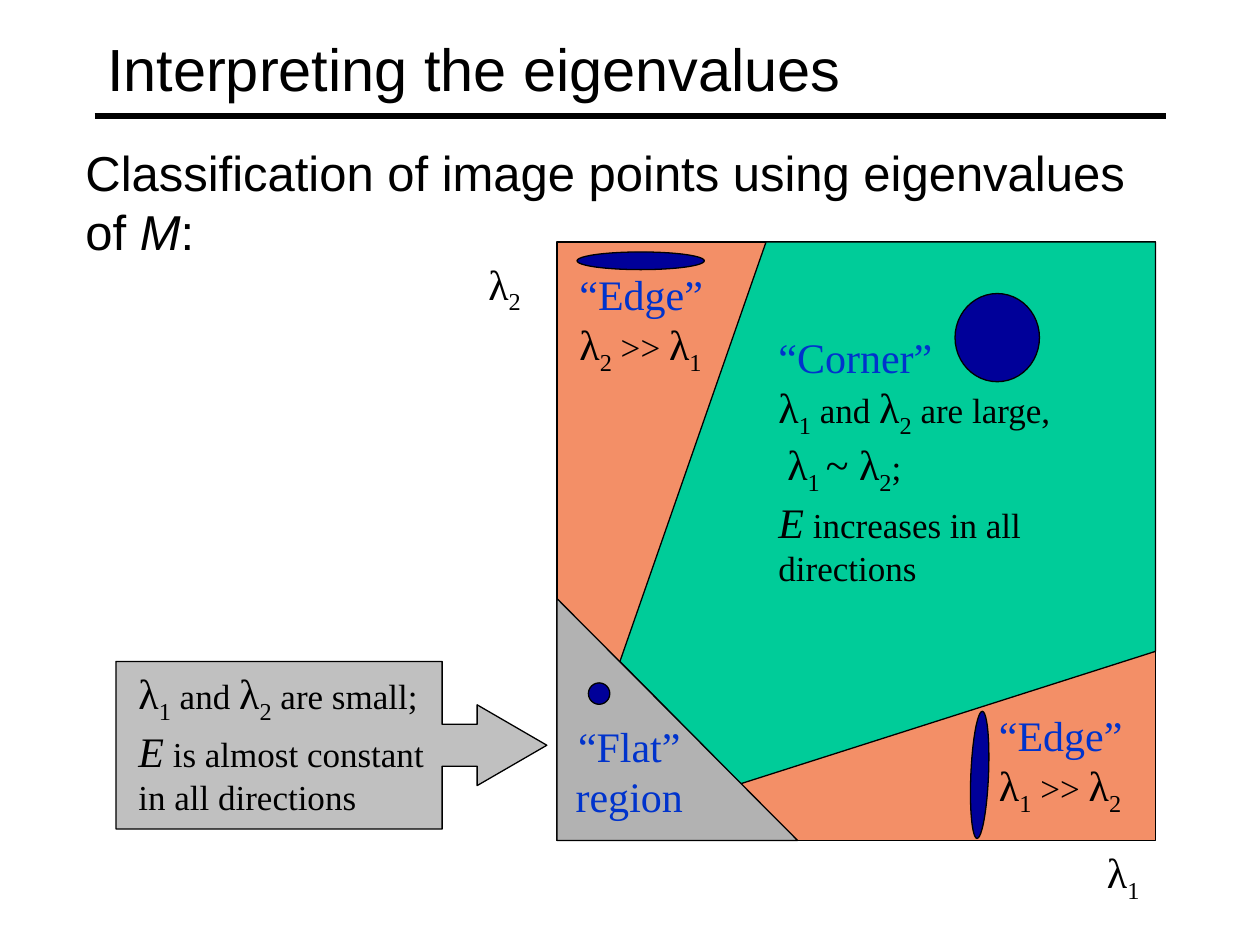
import pptx
import pptx.util
import pptx.dml.color
import pptx.enum.shapes
import pptx.enum.text
import lxml.etree

Inches = pptx.util.Inches
Pt = pptx.util.Pt
RGB = pptx.dml.color.RGBColor.from_string
MSO = pptx.enum.shapes.MSO_SHAPE
ALIGN = pptx.enum.text.PP_ALIGN
COLORS = {
    "black": "000000", "label": "0033CC", "edge": "F38F67", "corner": "00CC99",
    "flat": "B2B2B2", "callout": "C0C0C0", "ellipse": "000099",
}
SERIF = "Times New Roman"


def add_run(p, text, size=24, font=SERIF, color="black", sub=False, italic=False):
    r = p.add_run()
    r.text = text
    r.font.size = Pt(size)
    r.font.name = font
    r.font.color.rgb = RGB(COLORS[color])
    r.font.italic = italic
    if sub:
        r.font._element.set("baseline", "-25000")


prs = pptx.Presentation()
prs.slide_width, prs.slide_height = Inches(10), Inches(7.5)
s = prs.slides.add_slide(prs.slide_layouts[5])

title = s.shapes.title
title.left, title.top = Inches(0.75), Inches(0.08)
title.width, title.height = Inches(8.5), Inches(0.92)
tf = title.text_frame
tf.vertical_anchor = pptx.enum.text.MSO_ANCHOR.MIDDLE
tf.paragraphs[0].alignment = ALIGN.LEFT
add_run(tf.paragraphs[0], "Interpreting the eigenvalues", size=34, font="Arial")

rule = s.shapes.add_connector(
    pptx.enum.shapes.MSO_CONNECTOR.STRAIGHT,
    Inches(0.75), Inches(0.92), Inches(9.25), Inches(0.92))
rule.line.color.rgb = RGB(COLORS["black"])
rule.line.width = Pt(3)
lxml.etree.SubElement(
    rule._element.spPr, "{http://schemas.openxmlformats.org/drawingml/2006/main}effectLst")

corner_points = [(4.92, 5.25), (6.08, 1.92), (9.17, 1.92), (9.17, 5.17), (5.88, 6.22)]
shapes = [
    (MSO.RIGHT_ARROW_CALLOUT, 0.92, 5.25, 3.42, 1.33, "callout", 0),
    (MSO.RECTANGLE, 4.42, 1.92, 4.75, 4.75, "edge", 0),
    (None, 4.92, 1.92, 4.25, 4.31, "corner", 0),
    (MSO.RIGHT_TRIANGLE, 4.42, 4.75, 1.91, 1.92, "flat", 0),
    (MSO.OVAL, 7.58, 2.33, 0.67, 0.7, "ellipse", 0),
    (MSO.OVAL, 4.58, 2, 1.01, 0.14, "ellipse", 0),
    (MSO.OVAL, 4.67, 5.42, 0.17, 0.17, "ellipse", 0),
    (MSO.OVAL, 7.27, 6.08, 1.01, 0.14, "ellipse", 92.4),
]
for kind, x, y, w, h, color, angle in shapes:
    if kind is None:
        points = [(Inches(px), Inches(py)) for px, py in corner_points]
        builder = s.shapes.build_freeform(*points[0])
        builder.add_line_segments(points[1:], close=True)
        sp = builder.convert_to_shape()
    else:
        sp = s.shapes.add_shape(kind, Inches(x), Inches(y), Inches(w), Inches(h))
    if kind == MSO.RIGHT_ARROW_CALLOUT:
        for i, value in enumerate((0.25, 0.241, 0.416, 0.757)):
            sp.adjustments[i] = value
    sp.rotation = angle
    sp.shadow.inherit = False
    sp.fill.solid()
    sp.fill.fore_color.rgb = RGB(COLORS[color])
    sp.line.color.rgb = RGB(COLORS["black"])
    sp.line.width = Pt(0.75)

small = {"size": 20}
italic = {"italic": True}
label = {"color": "label"}
arial = {"size": 28, "font": "Arial"}
lambda1 = [("λ", {}), ("1", {"sub": True})]
lambda2 = [("λ", {}), ("2", {"sub": True})]
both = [*lambda1, (" and ", small), *lambda2]

texts = [
    (8.5, 6.67, 0.83, 0.5, ALIGN.CENTER, [lambda1]),
    (3.42, 2, 1.17, 0.5, ALIGN.CENTER, [lambda2]),
    (6.08, 2.58, 2.92, 2.03, ALIGN.LEFT, [
        [("“Corner”", label)],
        [*both, (" are large,", small)],
        [(" ", small), ("λ", {}), ("1 ", {"sub": True}), ("~ ", {}), *lambda2, (";", small)],
        [("E", italic), (" increases in all directions", small)]]),
    (1, 5.25, 2.58, 1.23, ALIGN.LEFT, [
        [*both, (" are small;", small)],
        [("E", italic), (" is almost constant in all directions", small)]]),
    (7.83, 5.58, 1.42, 0.9, ALIGN.LEFT, [
        [("“Edge” ", label)], [*lambda1, (" >> ", small), *lambda2]]),
    (4.5, 2.08, 1.42, 0.9, ALIGN.LEFT, [
        [("“Edge” ", label)], [*lambda2, (" >> ", small), *lambda1]]),
    (4.33, 5.67, 1.33, 0.9, ALIGN.CENTER, [[("“Flat” region", label)]]),
    (0.58, 1.08, 8.75, 1.03, ALIGN.LEFT, [
        [("Classification of image points using eigenvalues of ", arial),
         ("M", {**arial, **italic}), (":", arial)]]),
]
for x, y, w, h, align, lines in texts:
    tf = s.shapes.add_textbox(Inches(x), Inches(y), Inches(w), Inches(h)).text_frame
    tf.word_wrap = True
    p = tf.paragraphs[0]
    p.alignment = align
    for i, line in enumerate(lines):
        if i:
            p.add_line_break()
        for text, style in line:
            add_run(p, text, **style)

prs.save("out.pptx")
